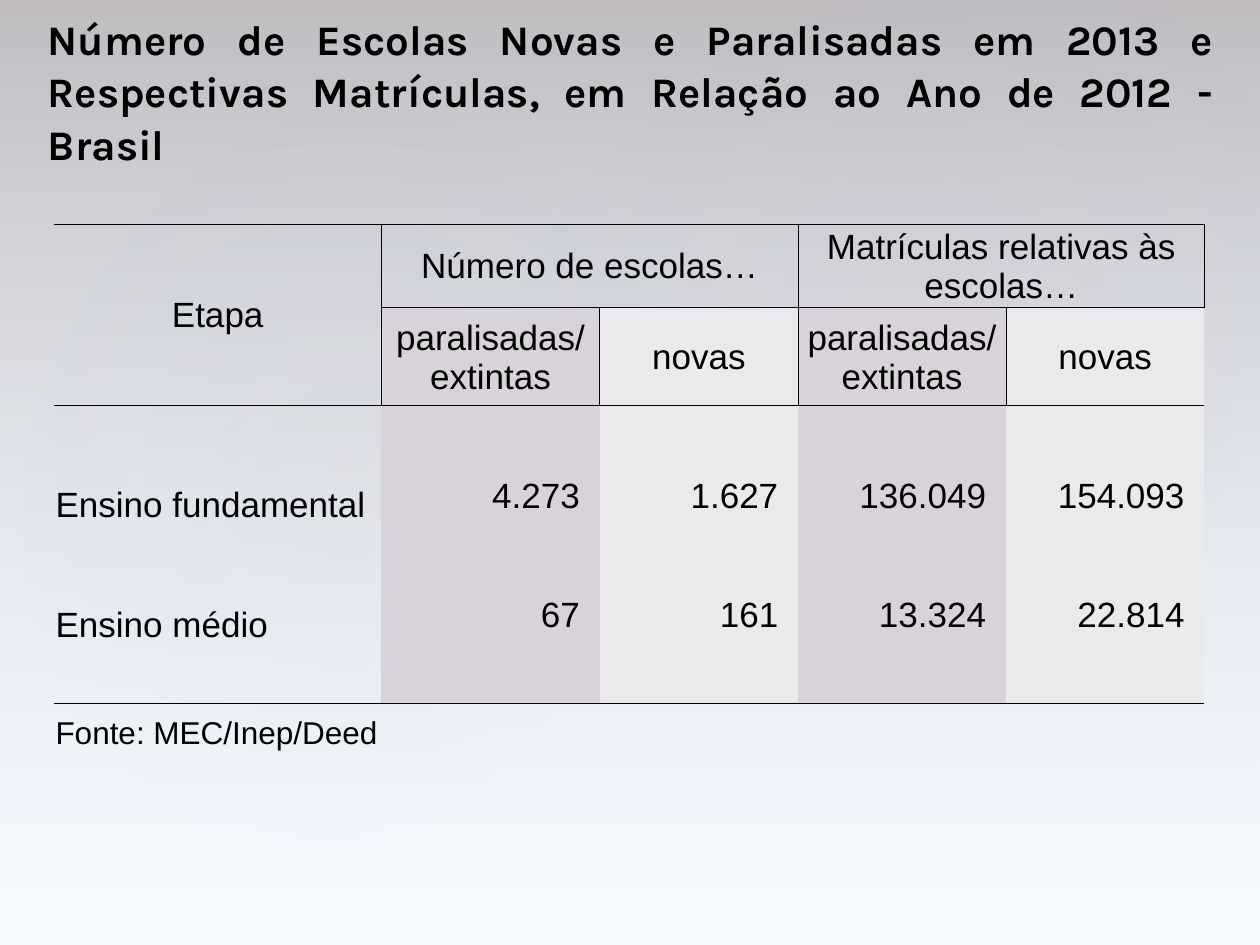
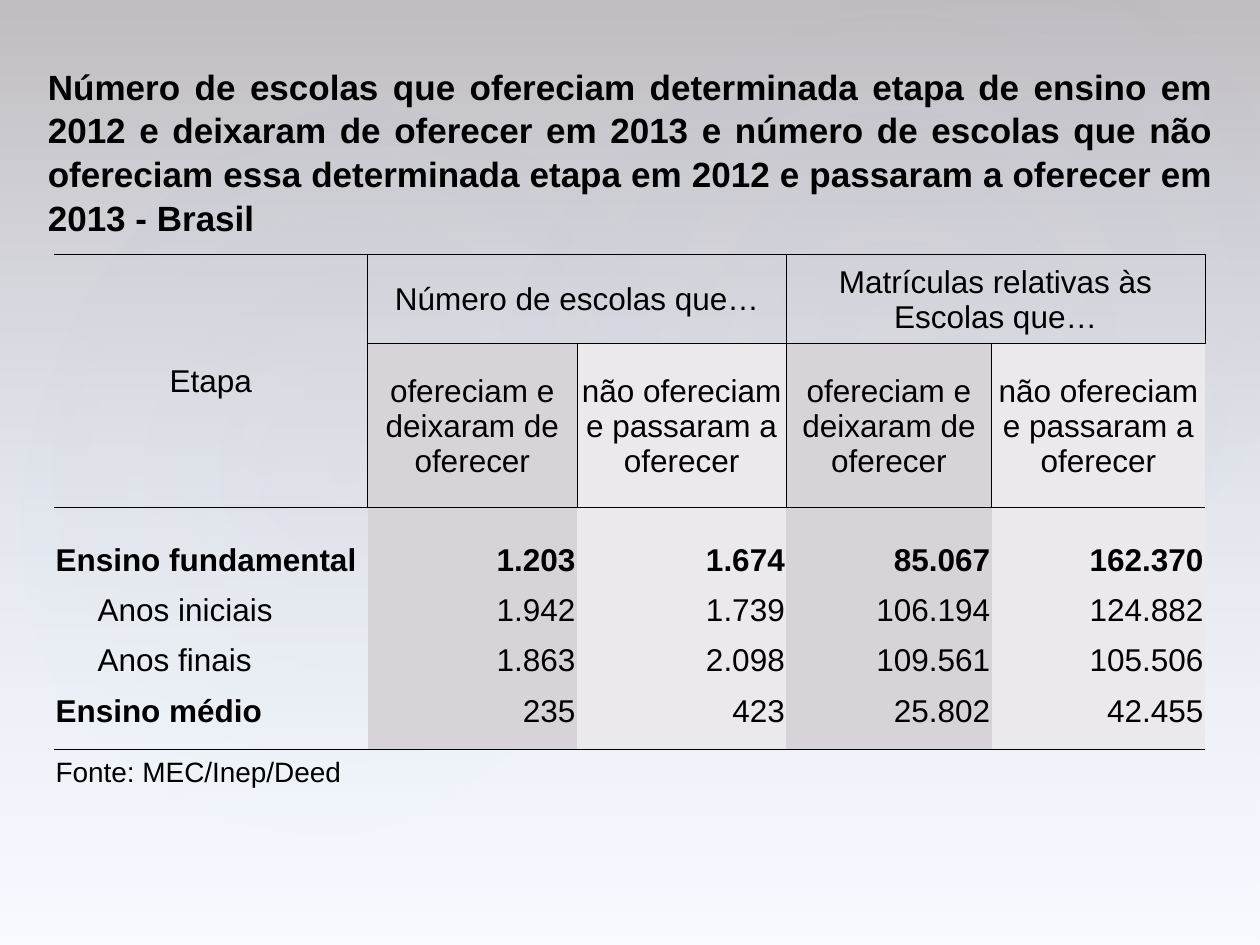
"""Build two slides of school counts and enrolments, Brazil 2012-2013."""
from dataclasses import dataclass

from lxml.etree import SubElement
from pptx import Presentation
from pptx.dml.color import RGBColor
from pptx.enum.shapes import MSO_SHAPE as Preset
from pptx.enum.text import MSO_ANCHOR as Anchor, MSO_AUTO_SIZE as AutoSize, PP_ALIGN as Align
from pptx.oxml.ns import qn
from pptx.util import Cm, Pt


@dataclass(frozen=True)
class Theme:
    ink: str = "000000"
    closed_band: str = "D8D3D9"
    new_band: str = "EBE9EC"
    sky: str = "ACCBF9"
    dusk: str = "504652"
    glow: str = "C4BCC6"
    body_font: str = "Arial"
    title_spacing: float = 1.04
    rule: float = 0.5
    gap_size: int = 8


THEME = Theme()
SLIDE_SIZE = (25.4, 19.05)
TABLE_LEFT = 1.09
TIGHT = (0.03, 0.03, 0.03, 0)
ROOMY = (0.4, 0.2, 0.4, 0.2)
INDENT = 0.88
GAP = None

BACKDROP = [
    (Preset.RECTANGLE, (0, 0, *SLIDE_SIZE), 0, [(0, THEME.dusk, 36), (100, THEME.sky, 10)]),
    (Preset.OVAL, (-0.76, 3.25, 15.39, 12.45), 294.3, [(0, THEME.glow, 8), (58, THEME.sky, 0)]),
    (Preset.OVAL, (9.09, 0.33, 18.01, 13.21), 328.7, [(0, THEME.glow, 8), (58, THEME.sky, 0)]),
]

SLIDES = [
    {
        "title": "Número de Escolas Novas e Paralisadas em 2013 e Respectivas Matrículas, "
                 "em Relação ao Ano de 2012 - Brasil",
        "title_font": "Karla", "title_size": 24, "title_box": (0.71, 0.99, 24, 2.54),
        "groups": ["Número de escolas…", "Matrículas relativas às escolas…"],
        "measures": ["paralisadas/\vextintas", "novas"],
        "body": [
            GAP,
            ("Ensino fundamental", ["4.273", "1.627", "136.049", "154.093"]),
            GAP,
            ("Ensino médio", ["67", "161", "13.324", "22.814"]),
            GAP,
        ],
        "bold": set(), "indented": set(), "value_insets": ROOMY,
        "size": 20, "source_size": 18, "source_spans_all": True,
        "top": 4.52, "columns": [6.6, 4.4, 4, 4.19, 4],
        "header_heights": [1.68, 1.98], "gap": 1.17, "row": 1.24, "source_height": 0.97,
    },
    {
        "title": "Número de escolas que ofereciam determinada etapa de ensino em 2012 e deixaram "
                 "de oferecer em 2013 e número de escolas que não ofereciam essa determinada "
                 "etapa em 2012 e passaram a oferecer em 2013 - Brasil",
        "title_font": "Arial", "title_size": 20, "title_box": (0.71, 1.32, 24, 3.61),
        "groups": ["Número de escolas que…", "Matrículas relativas às Escolas que…"],
        "measures": ["ofereciam e deixaram de oferecer", "não ofereciam e passaram a oferecer"],
        "body": [
            GAP,
            ("Ensino fundamental", ["1.203", "1.674", "85.067", "162.370"]),
            ("Anos iniciais", ["1.942", "1.739", "106.194", "124.882"]),
            ("Anos finais", ["1.863", "2.098", "109.561", "105.506"]),
            ("Ensino médio", ["235", "423", "25.802", "42.455"]),
            GAP,
        ],
        "bold": {"Ensino fundamental", "Ensino médio", "1.203", "1.674", "85.067", "162.370"},
        "indented": {"Anos iniciais", "Anos finais"}, "value_insets": TIGHT,
        "size": 18, "source_size": 16, "source_spans_all": False,
        "top": 5.13, "columns": [6.32, 4.22, 4.22, 4.14, 4.3],
        "header_heights": [1.8, 3.3], "gap": 0.42, "row": 1.01, "source_height": 0.79,
    },
]
SOURCE = "Fonte: MEC/Inep/Deed"


def style(paragraph, font, size, align=Align.LEFT, bold=False):
    paragraph.alignment = align
    paragraph.font.name, paragraph.font.size, paragraph.font.bold = font, Pt(size), bold
    paragraph.font.color.rgb = RGBColor.from_string(THEME.ink)


def fade(shape, stops, radial):
    shape.fill.background()
    properties = shape.element.spPr
    blank = properties.find(qn("a:noFill"))
    gradient = SubElement(properties, qn("a:gradFill"), rotWithShape="1")
    properties.replace(blank, gradient)
    stop_list = SubElement(gradient, qn("a:gsLst"))
    for position, colour, opacity in stops:
        stop = SubElement(stop_list, qn("a:gs"), pos=str(position * 1000))
        tint = SubElement(stop, qn("a:srgbClr"), val=colour)
        SubElement(tint, qn("a:alpha"), val=str(opacity * 1000))
    if radial:
        circle = SubElement(gradient, qn("a:path"), path="circle")
        SubElement(circle, qn("a:fillToRect"), **dict.fromkeys("ltrb", "50000"))
    else:
        SubElement(gradient, qn("a:lin"), ang="5400000", scaled="0")


def add_backdrop(slide):
    layout_tree = slide.slide_layout.shapes.element
    for order, (preset, box, turn, stops) in enumerate(BACKDROP):
        veil = slide.shapes.add_shape(preset, *map(Cm, box))
        veil.rotation = turn
        veil.shadow.inherit = False
        veil.line.fill.background()
        fade(veil, stops, radial=preset == Preset.OVAL)
        veil.element.nvSpPr.cNvPr.set("id", str(100 + order))
        layout_tree.insert(2 + order, veil.element)


def add_title(slide, content):
    title = slide.shapes.title
    title.left, title.top, title.width, title.height = map(Cm, content["title_box"])
    frame = title.text_frame
    frame.text = content["title"]
    frame.auto_size, frame.vertical_anchor, frame.word_wrap = AutoSize.NONE, Anchor.BOTTOM, True
    heading = frame.paragraphs[0]
    heading.line_spacing = THEME.title_spacing
    style(heading, content["title_font"], content["title_size"], Align.JUSTIFY, True)


def rule_cell(cell, sides):
    properties = cell._tc.get_or_add_tcPr()
    for order, side in enumerate("LRTB"):
        edge = SubElement(properties, qn(f"a:ln{side}"), w=str(Pt(THEME.rule)))
        properties.insert(order, edge)
        if side in sides:
            SubElement(SubElement(edge, qn("a:solidFill")), qn("a:srgbClr"), val=THEME.ink)
        else:
            SubElement(edge, qn("a:noFill"))


def write(cell, text, size, align=Align.LEFT, anchor=Anchor.BOTTOM, insets=TIGHT, bold=False):
    cell.margin_left, cell.margin_top, cell.margin_right, cell.margin_bottom = map(Cm, insets)
    cell.vertical_anchor = anchor
    cell.text = text
    for paragraph in cell.text_frame.paragraphs:
        style(paragraph, THEME.body_font, size, align, bold)
        if not text:
            SubElement(paragraph._p, qn("a:endParaRPr"), sz=str(size * 100))


def sides_at(row, column, last_row, last_column):
    if row < 2:
        return "TB" + "L" * (column > 0) + "R" * (column < last_column)
    return {2: "T", last_row - 1: "B", last_row: "T"}.get(row, "")


def write_header(table, content):
    size = content["size"]
    centred = {"align": Align.CENTER, "anchor": Anchor.MIDDLE}
    table.cell(0, 0).merge(table.cell(1, 0))
    write(table.cell(0, 0), "Etapa", size, **centred)
    for number, group in enumerate(content["groups"]):
        first = 1 + 2 * number
        table.cell(0, first).merge(table.cell(0, first + 1))
        write(table.cell(0, first), group, size, **centred)
        for offset, measure in enumerate(content["measures"]):
            write(table.cell(1, first + offset), measure, size, **centred)


def write_body(table, content):
    size, bold = content["size"], content["bold"]
    for row, entry in enumerate(content["body"], start=2):
        if entry is GAP:
            for cell in table.rows[row].cells:
                write(cell, "", THEME.gap_size)
            continue
        stage, values = entry
        write(table.cell(row, 0), stage, size, bold=stage in bold)
        if stage in content["indented"]:
            table.cell(row, 0).margin_left = Cm(INDENT)
        for column, value in enumerate(values, start=1):
            write(table.cell(row, column), value, size, Align.RIGHT,
                  insets=content["value_insets"], bold=value in bold)


def add_school_table(slide, content):
    columns = content["columns"]
    body_heights = [content["gap"] if entry is GAP else content["row"] for entry in content["body"]]
    heights = content["header_heights"] + body_heights + [content["source_height"]]
    last_row, last_column = len(heights) - 1, len(columns) - 1
    table = slide.shapes.add_table(len(heights), len(columns), Cm(TABLE_LEFT), Cm(content["top"]),
                                   Cm(sum(columns)), Cm(sum(heights))).table
    table.first_row = table.horz_banding = False
    for column, width in zip(table.columns, columns):
        column.width = Cm(width)
    for row, height in zip(table.rows, heights):
        row.height = Cm(height)

    write_header(table, content)
    write_body(table, content)
    for column in range(1, last_column + 1):
        write(table.cell(last_row, column), "", THEME.gap_size)
    if content["source_spans_all"]:
        table.cell(last_row, 0).merge(table.cell(last_row, last_column))
    write(table.cell(last_row, 0), SOURCE, content["source_size"])

    for row in range(last_row + 1):
        for column in range(last_column + 1):
            cell = table.cell(row, column)
            if 0 < row < last_row and column > 0:
                cell.fill.solid()
                band = THEME.closed_band if column % 2 else THEME.new_band
                cell.fill.fore_color.rgb = RGBColor.from_string(band)
            else:
                cell.fill.background()
            if not cell.is_spanned:
                rule_cell(cell, sides_at(row, column, last_row, last_column))


def main():
    deck = Presentation()
    deck.slide_width, deck.slide_height = map(Cm, SLIDE_SIZE)
    title_only = deck.slide_layouts[5]
    for number, content in enumerate(SLIDES):
        slide = deck.slides.add_slide(title_only)
        if number == 0:
            add_backdrop(slide)
        add_title(slide, content)
        add_school_table(slide, content)
    deck.save("out.pptx")


if __name__ == "__main__":
    main()
